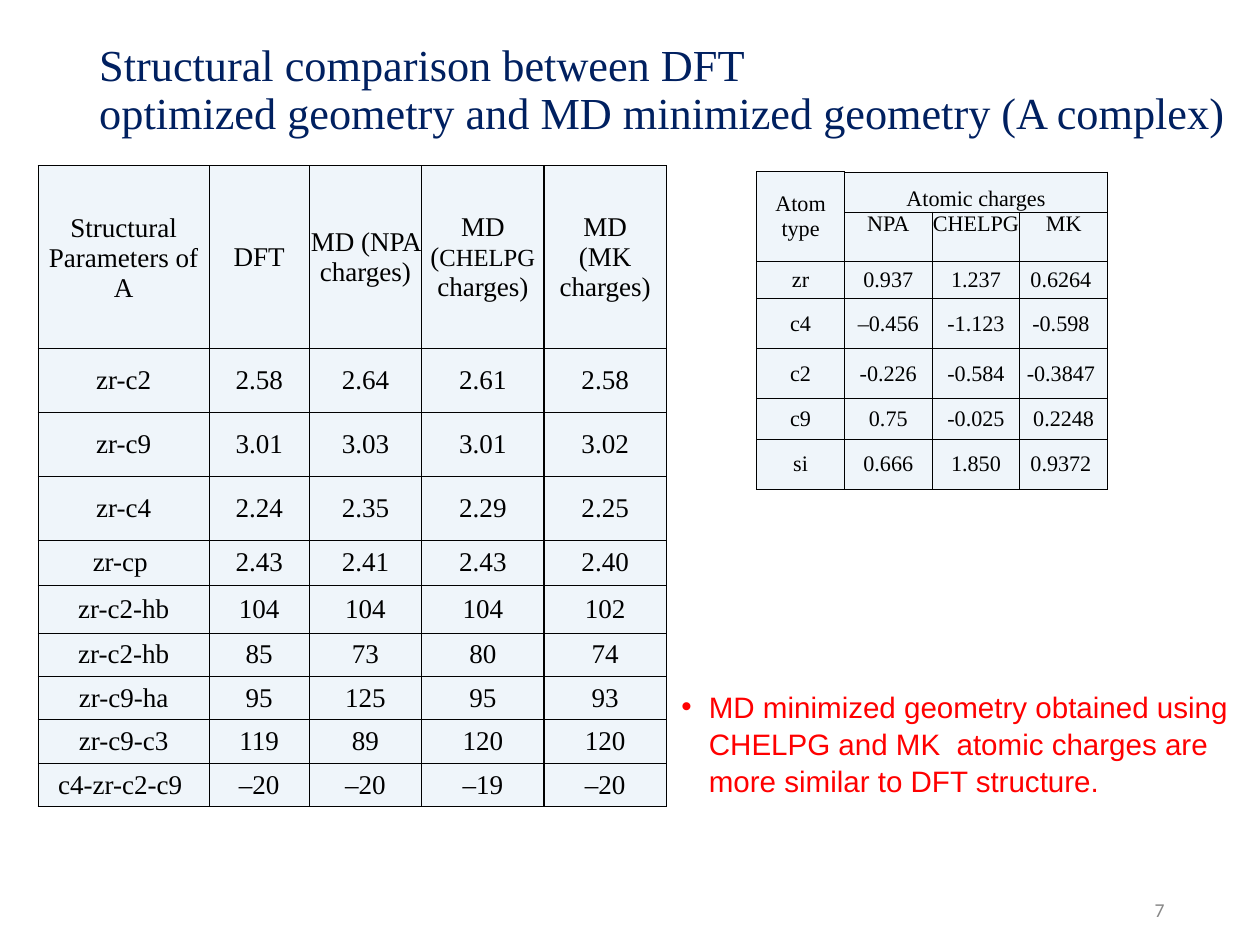
from lxml.etree import SubElement
from pptx import Presentation
from pptx.dml.color import RGBColor
from pptx.enum.text import MSO_ANCHOR, MSO_AUTO_SIZE, PP_ALIGN
from pptx.oxml import parse_xml
from pptx.oxml.ns import nsdecls, qn
from pptx.util import Inches, Pt

# Content
TITLE = ("Structural comparison between DFT\v"
         "optimized geometry and MD minimized geometry (A complex)")
FINDING = ("MD minimized geometry obtained using CHELPG and MK  atomic charges "
           "are more similar to DFT structure.")
PAGE_NUMBER = "7"

# A cell is a string, or a list of paragraphs made of (text, size) pieces
GEOMETRY = [
    ([[("Structural", 22), (" ", 24), ("Parameters of A", 22)]], "DFT", "MD (NPA charges)",
     [[("MD (", 22), ("CHELPG", 20), (" charges)", 22)]],
     [[("MD", 22)], [("(MK charges)", 22)]]),
    ("zr-c2", "2.58", "2.64", "2.61", "2.58"),
    ("zr-c9", "3.01", "3.03", "3.01", "3.02"),
    ("zr-c4", "2.24", "2.35", "2.29", "2.25"),
    ("zr-cp ", "2.43", "2.41", "2.43", "2.40"),
    ("zr-c2-hb", "104", "104", "104", "102"),
    ("zr-c2-hb", "85", "73", "80", "74"),
    ("zr-c9-ha", "95", "125", "95", "93"),
    ("zr-c9-c3", "119", "89", "120", "120"),
    ("c4-zr-c2-c9 ", "–20", "–20", "–19", "–20"),
]
GEOMETRY_COLUMNS = (1.93, 1.13, 1.27, 1.38, 1.38)
GEOMETRY_ROWS = (2.07, 0.72, 0.72, 0.72, 0.51, 0.54, 0.49, 0.49, 0.49, 0.49)

CHARGES = [
    ("Atom type", "Atomic charges", "", ""),
    ("", "NPA", "CHELPG", "MK"),
    ("zr", "0.937", "1.237", "0.6264 "),
    ("c4", "–0.456", "-1.123", "-0.598 "),
    ("c2", "-0.226", "-0.584", "-0.3847 "),
    ("c9", "0.75", "-0.025", " 0.2248 "),
    ("si", "0.666", "1.850", "0.9372 "),
]
CHARGES_COLUMNS = (0.99,) * 4
CHARGES_ROWS = (0.45, 0.56, 0.42, 0.57, 0.56, 0.46, 0.57)
CHARGES_MERGES = [((0, 0), (1, 0)), ((0, 1), (0, 3))]
# Cell sides drawn with a hairline around the spanning header
HAIRLINES = {(0, 0): "R"}
for column in (1, 2, 3):
    HAIRLINES[0, column] = "LRTB"
    HAIRLINES[1, column] = "T"

SERIF = "Times New Roman"
NAVY, RED, GREY, BLACK, PALE = "002060", "FF0000", "878787", "000000", "EFF5FA"


def color(value):
    return RGBColor.from_string(value)


def add_text(para, text, size=18, font=SERIF, fill=BLACK):
    span = para.add_run()
    span.text = text
    span.font.size = Pt(size)
    span.font.name = font
    span.font.bold = False
    span.font.color.rgb = color(fill)


def place(shape, left, top, width, height):
    shape.left, shape.top = Inches(left), Inches(top)
    shape.width, shape.height = Inches(width), Inches(height)


def set_margins(item, inset):
    item.margin_left = item.margin_right = Inches(inset)
    item.margin_top = item.margin_bottom = Inches(inset)


def add_borders(cell, hairlines):
    properties = cell._tc.get_or_add_tcPr()
    for index, side in enumerate("LRTB"):
        points = 0.25 if side in hairlines else 1
        properties.insert(index, parse_xml(
            f'<a:ln{side} {nsdecls("a")} w="{Pt(points)}"><a:solidFill>'
            f'<a:srgbClr val="{BLACK}"/></a:solidFill></a:ln{side}>'))


def add_grid(page, rows, left, top, widths, heights, size, hairlines=None, merges=()):
    frame = page.shapes.add_table(len(rows), len(widths), Inches(left), Inches(top),
                                  Inches(sum(widths)), Inches(sum(heights)))
    grid = frame.table
    grid.first_row = grid.horz_banding = False
    for column, width in zip(grid.columns, widths):
        column.width = Inches(width)
    for row, height in zip(grid.rows, heights):
        row.height = Inches(height)
    for r, row in enumerate(rows):
        for c, content in enumerate(row):
            cell = grid.cell(r, c)
            set_margins(cell, 0)
            cell.vertical_anchor = MSO_ANCHOR.MIDDLE
            cell.fill.solid()
            cell.fill.fore_color.rgb = color(PALE)
            add_borders(cell, (hairlines or {}).get((r, c), ""))
            if not content:
                continue
            paragraphs = [[(content, size)]] if isinstance(content, str) else content
            for number, pieces in enumerate(paragraphs):
                text = cell.text_frame
                para = text.add_paragraph() if number else text.paragraphs[0]
                para.alignment = PP_ALIGN.CENTER
                for words, points in pieces:
                    add_text(para, words, size=points)
    for first, last in merges:
        grid.cell(*first).merge(grid.cell(*last))
    return grid


deck = Presentation()
deck.slide_width, deck.slide_height = Inches(14.22), Inches(10.67)
page = deck.slides.add_slide(deck.slide_layouts[1])

# Title
title = page.shapes.title
place(title, 1.08, 0, 14.77, 2.06)
title.text_frame.auto_size = MSO_AUTO_SIZE.NONE
title.text_frame.vertical_anchor = MSO_ANCHOR.MIDDLE
set_margins(title.text_frame, 0.04)
para = title.text_frame.paragraphs[0]
para.alignment = PP_ALIGN.LEFT
para.line_spacing = 0.9
for number, line in enumerate(TITLE.split("\v")):
    if number:
        para.add_line_break()
    add_text(para, line, size=36, fill=NAVY)

# Tables
add_grid(page, GEOMETRY, 0.43, 1.87, GEOMETRY_COLUMNS, GEOMETRY_ROWS, 22)
charges = add_grid(page, CHARGES, 8.54, 1.94, CHARGES_COLUMNS, CHARGES_ROWS, 18,
                   HAIRLINES, CHARGES_MERGES)
charges.cell(0, 1).vertical_anchor = MSO_ANCHOR.BOTTOM
for column in (1, 2, 3):
    charges.cell(1, column).vertical_anchor = MSO_ANCHOR.TOP

# Finding
finding = page.placeholders[1]
place(finding, 7.69, 7.76, 6.64, 1.24)
finding.text_frame.auto_size = MSO_AUTO_SIZE.NONE
set_margins(finding.text_frame, 0)
para = finding.text_frame.paragraphs[0]
para.line_spacing = 1.05
para.space_before = Pt(0)
add_text(para, FINDING, size=24, font="Arial", fill=RED)
properties = para._p.get_or_add_pPr()
properties.set("marL", str(Inches(0.31)))
properties.set("indent", str(-Inches(0.31)))
SubElement(SubElement(properties, qn("a:buClr")), qn("a:srgbClr")).set("val", RED)
SubElement(properties, qn("a:buFont")).set("typeface", "Arial")
SubElement(properties, qn("a:buChar")).set("char", "•")

# Page number
box = page.shapes.add_textbox(Inches(12.92), Inches(10.1), Inches(0.32), Inches(0.35))
box.text_frame.word_wrap = False
box.text_frame.vertical_anchor = MSO_ANCHOR.MIDDLE
para = box.text_frame.paragraphs[0]
para.alignment = PP_ALIGN.RIGHT
add_text(para, PAGE_NUMBER, size=16, font="Calibri", fill=GREY)

deck.save("out.pptx")
